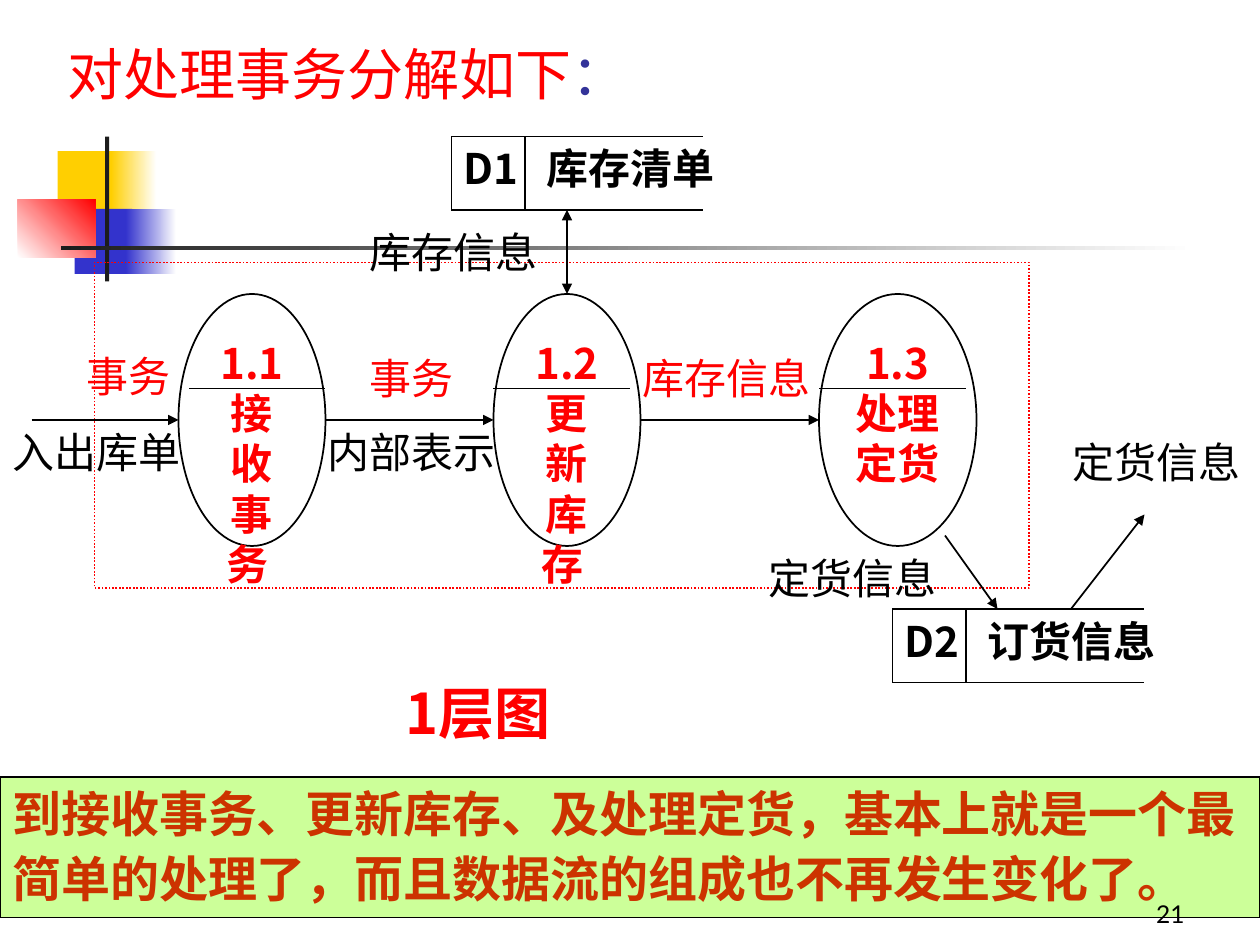
from lxml import etree
from pptx import Presentation
from pptx.dml.color import RGBColor
from pptx.enum.dml import MSO_LINE
from pptx.enum.shapes import MSO_CONNECTOR, MSO_SHAPE
from pptx.enum.text import MSO_ANCHOR, PP_ALIGN
from pptx.oxml.ns import qn
from pptx.util import Emu, Pt

RECT, OVAL = MSO_SHAPE.RECTANGLE, MSO_SHAPE.OVAL
STRAIGHT = MSO_CONNECTOR.STRAIGHT
DOTTED = MSO_LINE.ROUND_DOT
TOP, MIDDLE, BOTTOM = MSO_ANCHOR.TOP, MSO_ANCHOR.MIDDLE, MSO_ANCHOR.BOTTOM
LEFT, CENTER, RIGHT = PP_ALIGN.LEFT, PP_ALIGN.CENTER, PP_ALIGN.RIGHT

CJK, LATIN = "Noto Sans CJK SC", "Lato"
COLORS = {
    "black": "000000", "white": "FFFFFF", "red": "FF0000", "navy": "333399",
    "yellow": "FFCF01", "blue": "3333CC", "ink": "1C1C1C",
    "lime": "CCFF99", "rust": "CC3300",
}
PX = 7620  # 120 px to the inch


def px(n):
    return Emu(n * PX)


def rgb(name):
    return RGBColor.from_string(COLORS[name])


def add_run(p, text, size, color, bold=False, font=CJK):
    r = p.add_run()
    r.text = text
    r.font.size, r.font.bold, r.font.name = Pt(size), bold, font
    r.font.color.rgb = rgb(color)
    etree.SubElement(r._r.get_or_add_rPr(), qn("a:ea")).set("typeface", font)


def write(s, runs, align=LEFT, anchor=TOP):
    tf = s.text_frame
    tf.word_wrap, tf.vertical_anchor = True, anchor
    p = tf.paragraphs[0]
    p.alignment = align
    for run in runs:
        add_run(p, *run)
    return p


def add_text(slide, box, *runs, align=LEFT, anchor=TOP):
    return write(slide.shapes.add_textbox(*map(px, box)), runs, align, anchor)


def add_box(slide, kind, box, fill=None, line=None, fade=None, angle=0):
    s = slide.shapes.add_shape(kind, *map(px, box))
    s.shadow.inherit = False
    if fade:
        s.fill.gradient()
        s.fill.gradient_angle = angle
        for stop, name, at in zip(s.fill.gradient_stops, (fill, fade), (0, 1)):
            stop.color.rgb, stop.position = rgb(name), at
    elif fill:
        s.fill.solid()
        s.fill.fore_color.rgb = rgb(fill)
    else:
        s.fill.background()
    if line:
        s.line.color.rgb, s.line.width = rgb(line), Pt(1)
    else:
        s.line.fill.background()
    return s


def add_line(slide, x1, y1, x2, y2, *ends):
    c = slide.shapes.add_connector(STRAIGHT, *map(px, (x1, y1, x2, y2)))
    c.line.color.rgb, c.line.width = rgb("black"), Pt(1)
    for end in ends:
        etree.SubElement(c.line._get_or_add_ln(), qn(f"a:{end}")).set("type", "triangle")
    etree.SubElement(c._element.spPr, qn("a:effectLst"))


def add_ornament(slide, x, y):
    """Coloured squares, upright bar and fading rule."""
    add_box(slide, RECT, (x + 38, y + 14, 58, 62), "yellow")
    add_box(slide, RECT, (x + 89, y + 14, 43, 62), "yellow", fade="white")
    add_box(slide, RECT, (x + 54, y + 69, 55, 62), "blue")
    add_box(slide, RECT, (x + 103, y + 69, 48, 62), "blue", fade="white")
    add_box(slide, RECT, (x, y + 60, 74, 55), "white", fade="red", angle=45)
    add_box(slide, RECT, (x + 83, y, 4, 138), "ink")
    add_box(slide, RECT, (x + 41, y + 104, 1080, 4), "ink", fade="white")


def add_process(slide, x, y, w, text, rule_x, rule_w):
    """Ellipse with a number above a rule and a name below it."""
    s = add_box(slide, OVAL, (x, y, w, 240), line="black")
    write(s, [(text, 24, "red", True)], CENTER)
    add_line(slide, x + rule_x, y + 90, x + rule_x + rule_w, y + 90)


def add_store(slide, x, y, number, name):
    """Data store: open-ended box with a number cell."""
    w, h, cell = 240, 70, 70
    for dy in (0, h):
        add_line(slide, x, y + dy, x + w, y + dy)
    for dx in (0, cell):
        add_line(slide, x + dx, y, x + dx, y + h)
    p = add_text(slide, (x, y, 270, 60), (f"{number}\t{name}", 24, "black", True))
    tabs = etree.SubElement(p._p.get_or_add_pPr(), qn("a:tabLst"))
    etree.SubElement(tabs, qn("a:tab"), pos=str(px(79)), algn="l")


def add_diagram(slide, x, y):
    """Data flow diagram, placed from the top left of its dotted frame."""
    add_box(slide, RECT, (x, y, 890, 310), line="red").line.dash_style = DOTTED

    # Processes and stores
    add_process(slide, x + 80, y + 30, 140, "1.1 接收事务 ", 10, 130)
    add_process(slide, x + 380, y + 30, 140, "1.2 更新库存 ", 0, 130)
    add_process(slide, x + 690, y + 30, 150, "1.3 处理定货 ", 0, 140)
    add_store(slide, x + 340, y - 120, "D1", "库存清单")
    add_store(slide, x + 760, y + 330, "D2", "订货信息")

    # Flows
    for x1, x2 in ((-60, 80), (220, 380), (520, 690)):
        add_line(slide, x + x1, y + 150, x + x2, y + 150, "tailEnd")
    add_line(slide, x + 450, y - 50, x + 450, y + 30, "headEnd", "tailEnd")
    add_line(slide, x + 810, y + 260, x + 860, y + 330, "tailEnd")
    add_line(slide, x + 930, y + 330, x + 1000, y + 240, "tailEnd")

    # Flow labels
    for dx, dy, w, text, color in (
        (250, -40, 200, "库存信息", "black"),
        (920, 160, 190, "定货信息", "black"),
        (-19, 78, 130, "事务", "red"),
        (250, 80, 110, "事务", "red"),
        (-90, 150, 210, "入出库单", "black"),
        (210, 150, 190, "内部表示", "black"),
        (510, 80, 190, "库存信息", "red"),
        (630, 270, 210, "定货信息", "black"),
    ):
        add_text(slide, (x + dx, y + dy, w, 60), (text, 24, color))

    # Caption
    add_text(slide, (x + 284, y + 390, 276, 76), ("1层图", 32, "red", True))


def add_conclusion(slide, x, y):
    s = add_box(slide, RECT, (x, y, 1200, 134), "lime", "black")
    write(s, [("到接收事务、更新库存、及处理定货，基本上就是一个最简单的处理了，"
               "而且数据流的组成也不再发生变化了。", 28, "rust", True),
              (" ", 32, "rust")])


def main():
    prs = Presentation()
    prs.slide_width, prs.slide_height = px(1200), px(900)
    slide = prs.slides.add_slide(prs.slide_layouts[6])
    add_ornament(slide, 17, 130)
    add_text(slide, (52, 30, 808, 80), ("对处理事务分解如下", 32, "red"),
             ("：", 32, "navy"), anchor=MIDDLE)
    add_diagram(slide, 90, 250)
    add_conclusion(slide, 0, 740)
    add_text(slide, (890, 830, 250, 60), ("21", 14, "black", False, LATIN),
             align=RIGHT, anchor=BOTTOM)
    prs.save("out.pptx")


if __name__ == "__main__":
    main()
